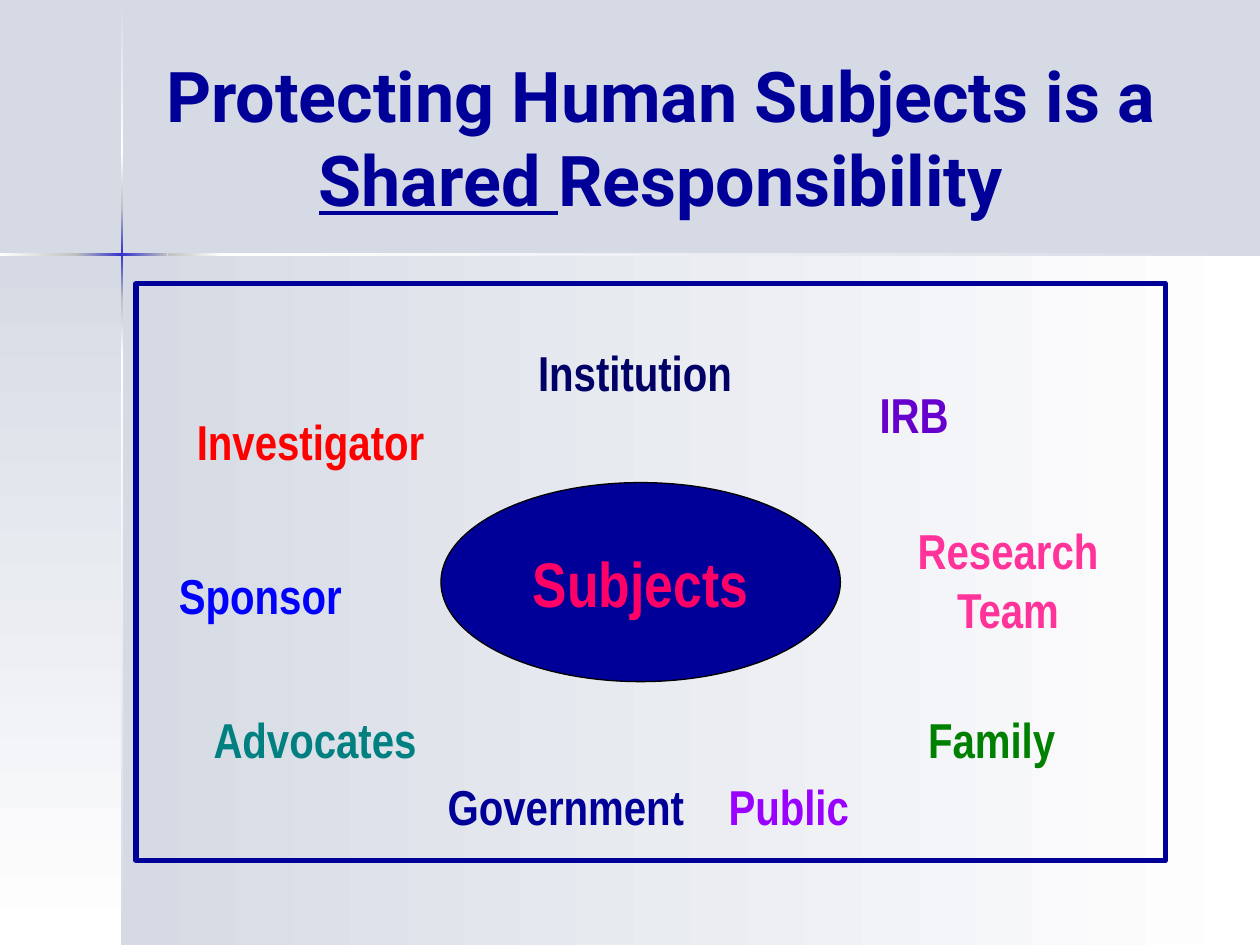
from lxml import etree
from pptx import Presentation
from pptx.dml.color import RGBColor
from pptx.enum import shapes, text
from pptx.oxml import ns
from pptx.util import Inches, Pt

COLORS = {
    "mist": "D6DAE4", "white": "FFFFFF", "silver": "C0C0C0", "blue": "3333CC",
    "navy": "000099", "black": "000000", "rose": "FF0066",
}
HORIZONTAL, VERTICAL = 0, 90

# Background parts: left, top, width, height, gradient angle, gradient colours
PANELS = [
    (0.97, 2.02, 9.03, 5.48, HORIZONTAL, ("mist", "white")),
    (0, 2.02, 0.97, 5.48, VERTICAL, ("mist", "white")),
]
# Thin cross lines: start, end, gradient colours
LINE_WIDTH = 0.02
CROSS_LEFT, CROSS_TOP = 0.96, 2.01
VERTICAL_PARTS = [
    (0.01, 1.21, ("mist", "white")),
    (2.82, 7.5, ("white", "mist")),
    (2.38, 2.82, ("silver", "white")),
    (1.21, 1.65, ("white", "silver")),
    (1.65, 2.38, ("silver", "blue", "silver")),
]
HORIZONTAL_PARTS = [
    (1.77, 10, ("white", "mist")),
    (0, 0.61, ("white", "silver")),
    (1.33, 1.77, ("silver", "white")),
    (0.6, 1.33, ("silver", "blue", "silver")),
]

# Title runs: wording, underlined
TITLE = [("Protecting Human Subjects is a ", False), ("Shared ", True),
         ("Responsibility", False)]

# Parties: wording, colour, left, top, width, height, wraps
PARTIES = [
    ("Sponsor", "0000FF", 1.32, 4.44, 1.49, 0.57, False),
    ("Advocates", "008080", 1.5, 5.58, 2, 0.57, True),
    ("IRB", "6600CC", 6.67, 3, 1.17, 0.57, True),
    ("Research Team", "FF3399", 7, 4.08, 2, 1.03, True),
    ("Institution", "000066", 4, 2.67, 2.08, 0.57, True),
    ("Government", "000099", 3.45, 6.11, 2.08, 0.57, False),
    ("Public", "9900FF", 5.68, 6.11, 1.16, 0.57, False),
    ("Family", "008000", 7.17, 5.58, 1.4, 0.57, True),
    ("Investigator", "FF0000", 1.46, 3.22, 2.01, 0.57, False),
]

presentation = Presentation()
presentation.slide_width, presentation.slide_height = Inches(10), Inches(7.5)
slide = presentation.slides.add_slide(presentation.slide_layouts[6])
slide.background.fill.solid()
slide.background.fill.fore_color.rgb = RGBColor.from_string(COLORS["mist"])


def add_shape(kind, box, fill=None, line=None, line_width=0.75):
    shape = slide.shapes.add_shape(kind, *map(Inches, box))
    shape.shadow.inherit = False
    if fill:
        shape.fill.solid()
        shape.fill.fore_color.rgb = RGBColor.from_string(fill)
    else:
        shape.fill.background()
    if line:
        shape.line.color.rgb = RGBColor.from_string(line)
        shape.line.width = Pt(line_width)
    else:
        shape.line.fill.background()
    return shape


def add_gradient(box, angle, names):
    shape = add_shape(shapes.MSO_SHAPE.RECTANGLE, box)
    properties = shape.element.spPr
    empty_fill = properties.find(ns.qn("a:noFill"))
    gradient = etree.Element(ns.qn("a:gradFill"), rotWithShape="1")
    stops = etree.SubElement(gradient, ns.qn("a:gsLst"))
    for index, name in enumerate(names):
        position = 100000 * index // (len(names) - 1)
        stop = etree.SubElement(stops, ns.qn("a:gs"), pos=str(position))
        etree.SubElement(stop, ns.qn("a:srgbClr"), val=COLORS[name])
    etree.SubElement(gradient, ns.qn("a:lin"), ang=str(angle * 60000), scaled="0")
    properties.replace(empty_fill, gradient)


def write_text(shape, runs, *, size, color, font="Arial Narrow", wrap=True,
               anchor=text.MSO_ANCHOR.TOP, grow=False):
    frame = shape.text_frame
    frame.word_wrap = wrap
    frame.vertical_anchor = anchor
    if grow:
        frame.auto_size = text.MSO_AUTO_SIZE.SHAPE_TO_FIT_TEXT
    paragraph = frame.paragraphs[0]
    paragraph.alignment = text.PP_ALIGN.CENTER
    for wording, underlined in runs:
        run = paragraph.add_run()
        run.text = wording
        run.font.name = font
        run.font.size = Pt(size)
        run.font.bold = True
        run.font.underline = underlined
        run.font.color.rgb = RGBColor.from_string(color)


# Background panels and cross lines
for *box, angle, names in PANELS:
    add_gradient(box, angle, names)
for start, end, names in VERTICAL_PARTS:
    add_gradient((CROSS_LEFT, start, LINE_WIDTH, end - start), VERTICAL, names)
for start, end, names in HORIZONTAL_PARTS:
    add_gradient((start, CROSS_TOP, end - start, LINE_WIDTH), HORIZONTAL, names)

# Title
title = slide.shapes.add_textbox(*map(Inches, (0.83, 0.33, 8.83, 1.5)))
write_text(title, TITLE, size=40, color=COLORS["navy"], font="Roboto",
           anchor=text.MSO_ANCHOR.MIDDLE)

# Frame and central ellipse
add_shape(shapes.MSO_SHAPE.RECTANGLE, (1.08, 2.25, 8.17, 4.58),
          line=COLORS["navy"], line_width=3)
subjects = add_shape(shapes.MSO_SHAPE.OVAL, (3.5, 3.83, 3.17, 1.58),
                     fill=COLORS["navy"], line=COLORS["black"])
write_text(subjects, [("Subjects", False)], size=36, color=COLORS["rose"],
           wrap=False, anchor=text.MSO_ANCHOR.MIDDLE)

# Parties around the subjects
for wording, color, *box, wrap in PARTIES:
    party = slide.shapes.add_textbox(*map(Inches, box))
    write_text(party, [(wording, False)], size=28, color=color, wrap=wrap, grow=True)

presentation.save("out.pptx")
